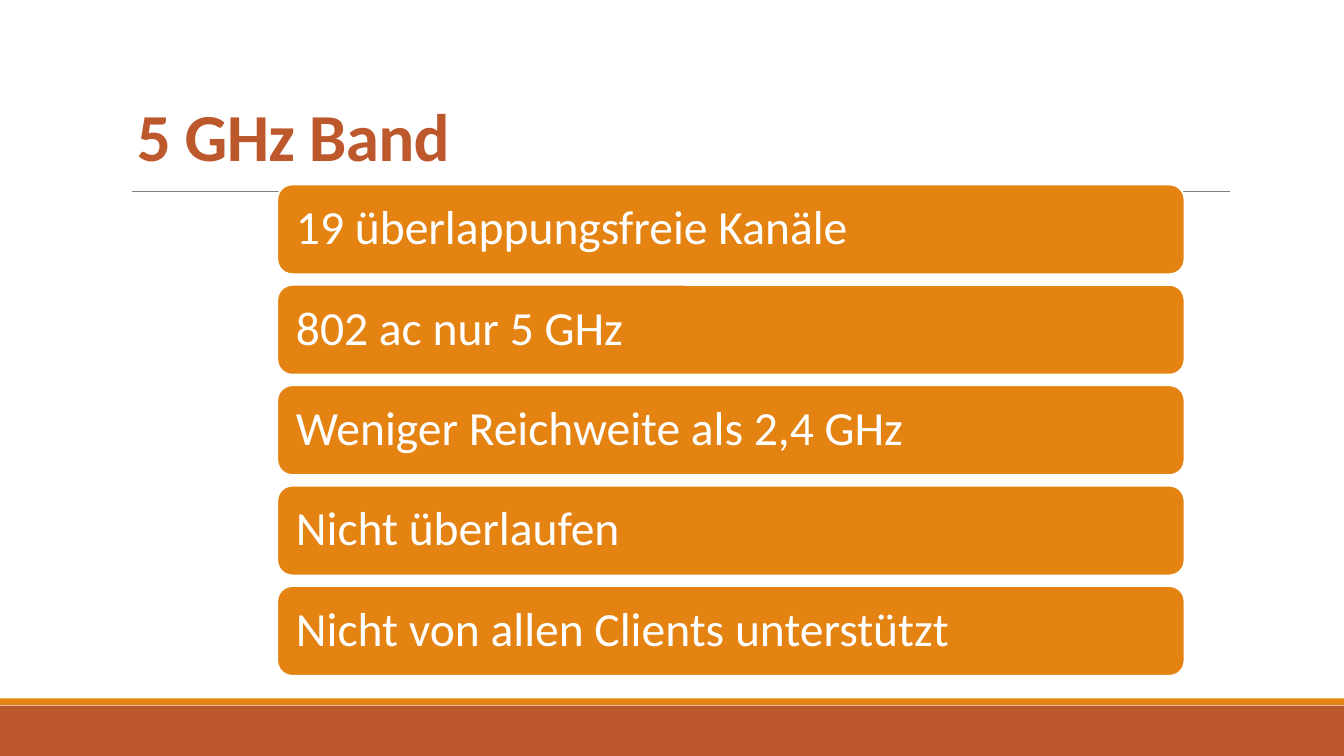
"""Build the slide on the 5 GHz band with five stacked statements."""
from lxml import etree
from pptx import Presentation
from pptx.dml.color import RGBColor
from pptx.enum.shapes import MSO_CONNECTOR, MSO_SHAPE
from pptx.enum.text import MSO_ANCHOR, PP_ALIGN
from pptx.oxml.ns import qn
from pptx.util import Cm, Pt

RUST = RGBColor(0xBD, 0x58, 0x2C)
ORANGE = RGBColor(0xE4, 0x83, 0x12)
GRAY = RGBColor(0x80, 0x80, 0x80)
WHITE = RGBColor(0xFF, 0xFF, 0xFF)
RECTANGLE = MSO_SHAPE.RECTANGLE
ROUNDED = MSO_SHAPE.ROUNDED_RECTANGLE
STRAIGHT = MSO_CONNECTOR.STRAIGHT
LEFT = PP_ALIGN.LEFT
MIDDLE = MSO_ANCHOR.MIDDLE
BOTTOM = MSO_ANCHOR.BOTTOM

STATEMENTS = [
    "19 überlappungsfreie Kanäle",
    "802 ac nur 5 GHz",
    "Weniger Reichweite als 2,4 GHz",
    "Nicht überlaufen",
    "Nicht von allen Clients unterstützt",
]
FIRST_TOP = 4.65
STEP = 2.53


def add_filled(page, kind, left, top, width, height, color):
    shape = page.shapes.add_shape(kind, Cm(left), Cm(top), Cm(width), Cm(height))
    shape.shadow.inherit = False
    shape.fill.solid()
    shape.fill.fore_color.rgb = color
    shape.line.fill.background()
    return shape


def write_text(shape, text, size, color, anchor, line_spacing):
    frame = shape.text_frame
    frame.word_wrap = True
    frame.vertical_anchor = anchor
    frame.text = text
    para = frame.paragraphs[0]
    para.alignment = LEFT
    para.line_spacing = line_spacing
    span = para.runs[0]
    span.font.name = "Calibri"
    span.font.size = Pt(size)
    span.font.color.rgb = color
    return span


deck = Presentation()
deck.slide_width = Cm(33.87)
deck.slide_height = Cm(19.05)
page = deck.slides.add_slide(deck.slide_layouts[6])

add_filled(page, RECTANGLE, 0, 17.78, 33.87, 1.27, RUST)
add_filled(page, RECTANGLE, 0, 17.6, 33.87, 0.17, ORANGE)

rule = page.shapes.add_connector(STRAIGHT, Cm(3.32), Cm(4.82), Cm(31), Cm(4.82))
rule.line.color.rgb = GRAY
rule.line.width = Pt(0.5)
etree.SubElement(rule._element.spPr, qn("a:effectLst"))

title = page.shapes.add_textbox(Cm(3.2), Cm(0.86), Cm(27.94), Cm(3.68))
title_span = write_text(title, "5 GHz Band", 48, RUST, BOTTOM, 0.85)
title_span.font.bold = True
title_span._r.get_or_add_rPr().set("spc", "-50")

for index, statement in enumerate(STATEMENTS):
    bar = add_filled(page, ROUNDED, 6.99, FIRST_TOP + index * STEP, 22.86, 2.26, ORANGE)
    bar.line.color.rgb = WHITE
    bar.line.width = Pt(1.25)
    frame = bar.text_frame
    frame.margin_left = frame.margin_right = Cm(0.36)
    frame.margin_top = frame.margin_bottom = Cm(0.36)
    write_text(bar, statement, 34, WHITE, MIDDLE, 0.9)

deck.save("out.pptx")
